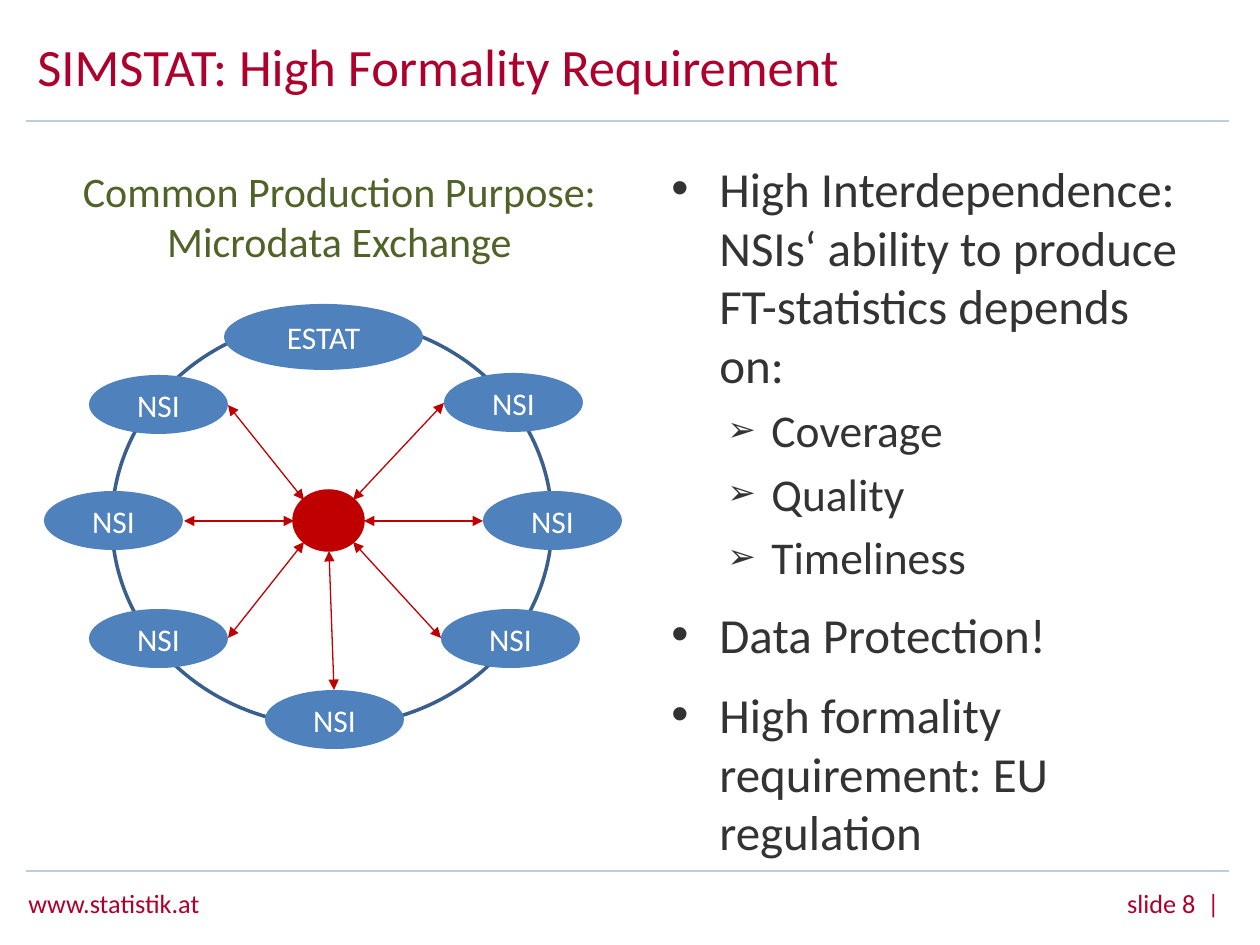
"""Build the SIMSTAT slide with its exchange ring and requirement list."""
from lxml.etree import SubElement
from pptx import Presentation
from pptx.dml.color import RGBColor
from pptx.enum.shapes import MSO_CONNECTOR, MSO_SHAPE
from pptx.enum.text import MSO_ANCHOR, PP_ALIGN
from pptx.oxml.ns import qn
from pptx.util import Emu, Pt

UNIT = 914400 / 126
RED, BLUE, HUB = "AE002C", "4F81BD", "C00000"


def px(*vals):
    return [Emu(round(v * UNIT)) for v in vals]


def rgb(code):
    return RGBColor.from_string(code)


deck = Presentation()
deck.slide_width, deck.slide_height = px(1260, 945)
slide = deck.slides.add_slide(deck.slide_layouts[6])
shapes = slide.shapes

labels = [
    ((16, 881, 286, 44), ["www.statistik.at"], 15, RED, PP_ALIGN.LEFT),
    ((788, 881, 444, 44), ["slide 8  |"], 15, RED, PP_ALIGN.RIGHT),
    ((25, 32, 961, 67), ["SIMSTAT: High Formality Requirement"], 30, RED, PP_ALIGN.LEFT),
    ((68, 158, 543, 115), ["Common Production Purpose:", "Microdata Exchange"],
     24, "4F6228", PP_ALIGN.CENTER),
]
for box, lines, size, color, align in labels:
    label = shapes.add_textbox(*px(*box))
    frame = label.text_frame
    frame.word_wrap = True
    frame.vertical_anchor = MSO_ANCHOR.MIDDLE
    para = frame.paragraphs[0]
    para.alignment = align
    for i, line in enumerate(lines):
        if i:
            para.add_line_break()
        run = para.add_run()
        run.text = line
        run.font.name, run.font.size = "Calibri", Pt(size)
        run.font.color.rgb = rgb(color)

body = shapes.add_textbox(*px(659, 152, 547, 687)).text_frame
body.word_wrap = True
items = [
    (0, "High Interdependence: NSIs‘ ability to produce FT-statistics depends on:"),
    (1, "Coverage"),
    (1, "Quality"),
    (1, "Timeliness"),
    (0, "Data Protection!"),
    (0, "High formality requirement: EU regulation"),
]
styles = [(48, 48, "•", 100, 28, 12), (100, 44, "➢", 75, 26, 5)]
for i, (level, words) in enumerate(items):
    left, hang, mark, scale, size, gap = styles[level]
    para = body.add_paragraph() if i else body.paragraphs[0]
    para.level = level
    para.space_before = Pt(gap if i else 0)
    props = para._p.get_or_add_pPr()
    margin, indent = px(left, -hang)
    props.set("marL", str(margin))
    props.set("indent", str(indent))
    SubElement(props, qn("a:buSzPct")).set("val", str(scale * 1000))
    SubElement(props, qn("a:buFont")).set("typeface", "Arial")
    SubElement(props, qn("a:buChar")).set("char", mark)
    run = para.add_run()
    run.text = words
    run.font.name, run.font.size = "Calibri", Pt(size)
    run.font.color.rgb = rgb("333333")

ovals = [
    ((112, 319, 440, 407), None, "3A5F8C", ""),
    ((224, 304, 199, 66), BLUE, None, "ESTAT"),
    ((294, 491, 69, 59), HUB, HUB, ""),
]
nodes = [(89, 609), (89, 375), (265, 690), (44, 491), (441, 609), (444, 373), (483, 491)]
ovals += [((x, y, 139, 59), BLUE, None, "NSI") for x, y in nodes]
for box, fill, edge, name in ovals:
    oval = shapes.add_shape(MSO_SHAPE.OVAL, *px(*box))
    oval.shadow.inherit = False
    if fill:
        oval.fill.solid()
        oval.fill.fore_color.rgb = rgb(fill)
    else:
        oval.fill.background()
    if edge:
        oval.line.color.rgb = rgb(edge)
        oval.line.width = Pt(2)
    else:
        oval.line.fill.background()
    if name:
        frame = oval.text_frame
        frame.vertical_anchor = MSO_ANCHOR.MIDDLE
        para = frame.paragraphs[0]
        para.alignment = PP_ALIGN.CENTER
        run = para.add_run()
        run.text = name
        run.font.name, run.font.size = "Calibri", Pt(18)
        run.font.color.rgb = rgb("FFFFFF")

rules = [((26, y, 1229, y), "B9CDE5", 1.5, False) for y in (121, 871)]
spokes = [
    (184, 521, 294, 521), (228, 405, 304, 500), (444, 403, 353, 500), (364, 521, 483, 521),
    (441, 638, 353, 542), (334, 690, 329, 551), (228, 638, 304, 542),
]
for ends, color, width, arrow in rules + [(s, HUB, 0.75, True) for s in spokes]:
    link = shapes.add_connector(MSO_CONNECTOR.STRAIGHT, *px(*ends))
    link.line.color.rgb = rgb(color)
    link.line.width = Pt(width)
    if arrow:
        for tag in ("a:headEnd", "a:tailEnd"):
            SubElement(link.line._get_or_add_ln(), qn(tag)).set("type", "triangle")
    SubElement(link._element.spPr, qn("a:effectLst"))

deck.save("out.pptx")
